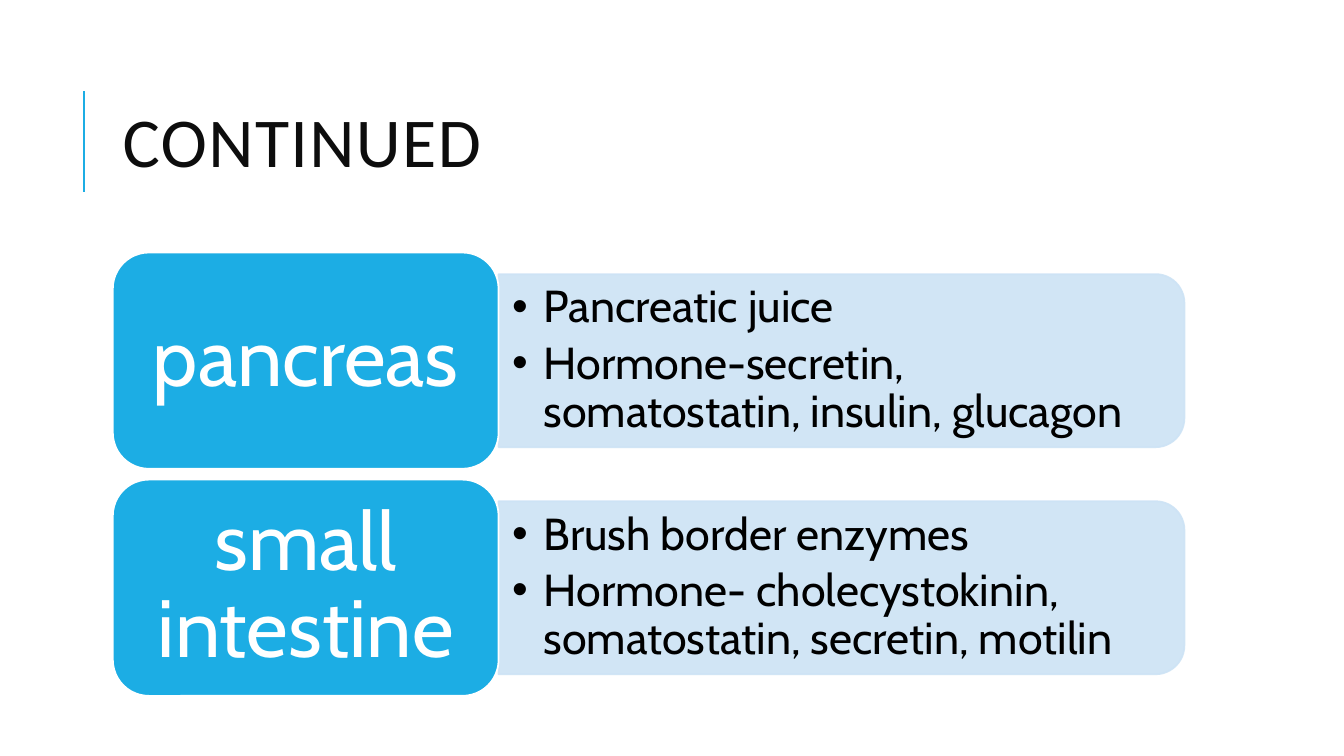
from dataclasses import dataclass
from lxml import etree
from pptx import Presentation
from pptx import util as u
from pptx.dml import color
from pptx.enum import shapes, text
from pptx.oxml import ns

Pt = u.Pt


@dataclass(frozen=True)
class Theme:
    accent: str = "1CADE4"
    pale: str = "CDE3F5"
    white: str = "FFFFFF"
    black: str = "000000"
    ink: str = "0D0D0D"
    head: str = "Calibri"
    body: str = "Cabin"
    title: int = 50
    label: int = 58
    item: int = 32
    edge: float = 1.25
    rule: float = 1.5


T = Theme()
ROWS = [
    ("pancreas", ["Pancreatic juice",
                  "Hormone-secretin, somatostatin, insulin, glucagon"]),
    ("small intestine", ["Brush border enzymes",
                         "Hormone- cholecystokinin, somatostatin, secretin, motilin"]),
]


def rgb(code):
    return color.RGBColor.from_string(code)


def add_run(para, words, font, size, code):
    run = para.add_run()
    run.text = words
    run.font.name = font
    run.font.size = Pt(size)
    run.font.color.rgb = rgb(code)
    return run


def set_frame(frame, side, edge):
    frame.word_wrap = True
    frame.auto_size = text.MSO_AUTO_SIZE.NONE
    frame.vertical_anchor = text.MSO_ANCHOR.MIDDLE
    frame.margin_left = frame.margin_right = Pt(side)
    frame.margin_top = frame.margin_bottom = Pt(edge)


def add_block(slide, kind, box, fill, line):
    block = slide.shapes.add_shape(kind, *map(Pt, box))
    block.shadow.inherit = False
    block.fill.solid()
    block.fill.fore_color.rgb = rgb(fill)
    block.line.color.rgb = rgb(line)
    block.line.width = Pt(T.edge)
    return block


def add_title(slide, box, words):
    left, top, wide, high = box
    x = left - 20.6
    rule = slide.shapes.add_connector(
        shapes.MSO_CONNECTOR.STRAIGHT,
        Pt(x), Pt(top + 91), Pt(x), Pt(top + 19))
    rule.line.color.rgb = rgb(T.accent)
    rule.line.width = Pt(T.rule)
    etree.SubElement(rule.element.spPr, ns.qn("a:effectLst"))
    frame = slide.shapes.add_textbox(*map(Pt, box)).text_frame
    set_frame(frame, 7.2, 3.6)
    para = frame.paragraphs[0]
    para.line_spacing = 0.8
    run = add_run(para, words, T.head, T.title, T.ink)
    run.font._element.set("spc", "100")


def add_panel(slide, box):
    left, top, wide, high = box
    turned = (left + (wide - high) / 2, top + (high - wide) / 2, high, wide)
    panel = add_block(slide, shapes.MSO_SHAPE.ROUND_2_SAME_RECTANGLE,
                      turned, T.pale, T.pale)
    panel.rotation = 90
    for tint in panel.element.spPr.iter(ns.qn("a:srgbClr")):
        etree.SubElement(tint, ns.qn("a:alpha"), val="90000")


def add_list(slide, box, items):
    frame = slide.shapes.add_textbox(*map(Pt, box)).text_frame
    set_frame(frame, 9.6, 4.8)
    for i, item in enumerate(items):
        para = frame.paragraphs[0] if i == 0 else frame.add_paragraph()
        para.level = 1
        para.line_spacing = 0.9
        para.space_after = Pt(5.5)
        props = para._p.get_or_add_pPr()
        props.set("marL", str(Pt(22.5)))
        props.set("indent", str(-Pt(22.5)))
        etree.SubElement(props, ns.qn("a:buFont"), typeface="Arial")
        etree.SubElement(props, ns.qn("a:buChar"), char="•")
        add_run(para, item, T.body, T.item, T.black)


def add_tile(slide, box, label):
    tile = add_block(slide, shapes.MSO_SHAPE.ROUNDED_RECTANGLE,
                     box, T.accent, T.white)
    set_frame(tile.text_frame, 17.3, 8.6)
    para = tile.text_frame.paragraphs[0]
    para.alignment = text.PP_ALIGN.CENTER
    para.line_spacing = 0.9
    add_run(para, label, T.body, T.label, T.white)


def add_row(slide, box, label, items):
    left, top, wide, high = box
    split = wide * 0.36
    inset = high * 0.1
    x, y = left + split, top + inset
    rest, tall = wide - split, high - 2 * inset
    add_panel(slide, (x, y, rest, tall))
    add_list(slide, (x, y + 6, rest - 6, tall - 12), items)
    add_tile(slide, (left, top, split, high), label)


def main():
    deck = Presentation()
    deck.slide_width, deck.slide_height = Pt(960), Pt(540)
    slide = deck.slides.add_slide(deck.slide_layouts[6])
    left, wide = 80.6, 765.4
    add_title(slide, (left, 46, wide, 118), "CONTINUED")
    high, gap = 154.5, 7.7
    for i, (label, items) in enumerate(ROWS):
        top = 180.4 + i * (high + gap)
        add_row(slide, (left, top, wide, high), label, items)
    deck.save("out.pptx")


if __name__ == "__main__":
    main()
